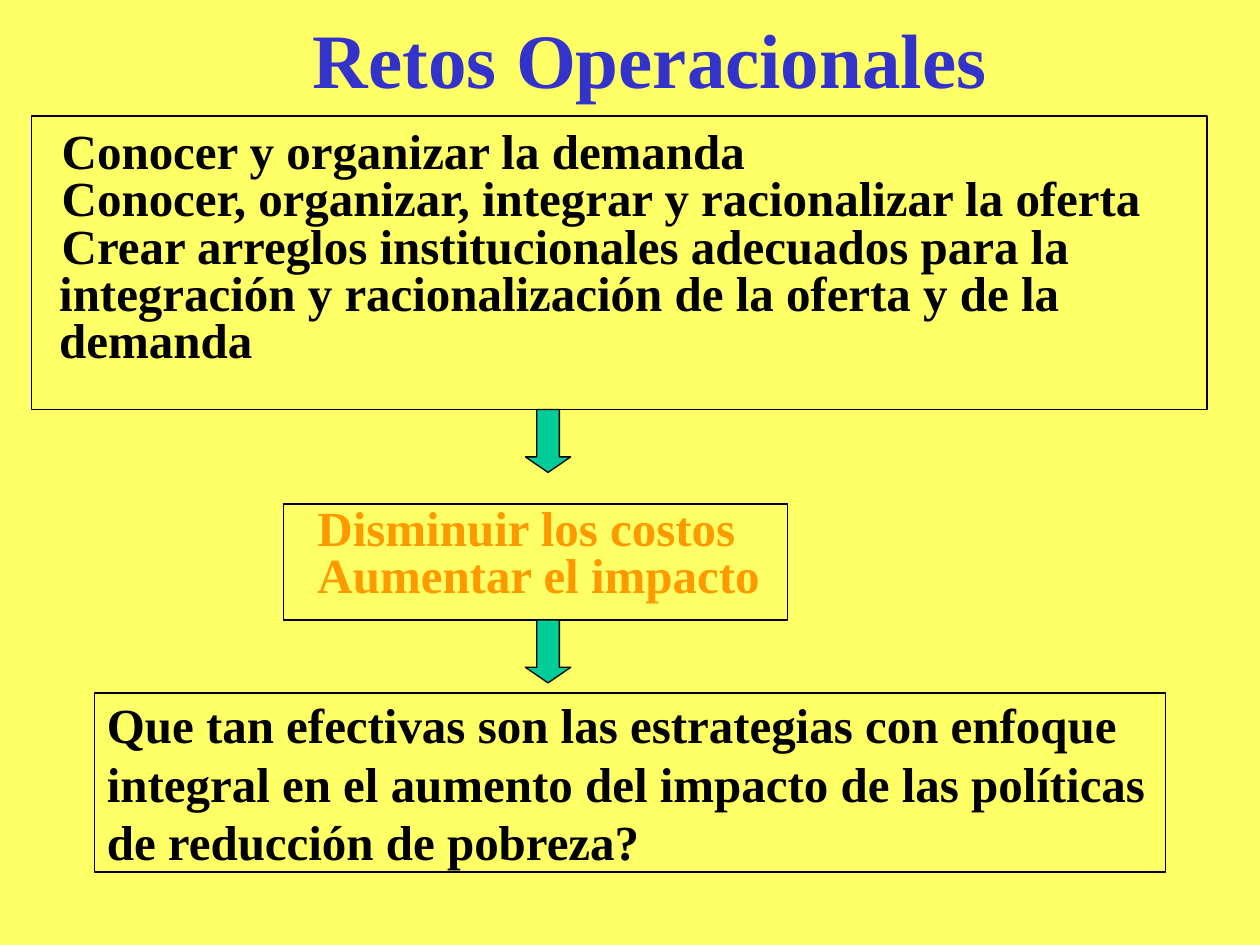
from pptx import Presentation
from pptx.dml.color import RGBColor
from pptx.enum.shapes import MSO_SHAPE
from pptx.enum.text import MSO_ANCHOR, PP_ALIGN
from pptx.util import Inches, Pt

RECTANGLE, DOWN_ARROW = MSO_SHAPE.RECTANGLE, MSO_SHAPE.DOWN_ARROW
TOP, MIDDLE = MSO_ANCHOR.TOP, MSO_ANCHOR.MIDDLE
LEFT, CENTER = PP_ALIGN.LEFT, PP_ALIGN.CENTER

# Content: box is left, top, width, height; margins are left, top (inches)
TITLE = {"lines": ["Retos Operacionales"], "box": (0.91, -0.17, 8.5, 1.25)}
STEPS = [
    {"lines": ["Conocer y organizar la demanda",
               "Conocer, organizar, integrar y racionalizar la oferta",
               "Crear arreglos institucionales adecuados para la integración "
               "y racionalización de la oferta y de la demanda"],
     "box": (0.25, 0.92, 9.33, 2.33), "margins": (0.22, 0.13),
     "color": "text", "spacing": 0.8, "indent": 0.02},
    {"lines": ["Disminuir los costos", "Aumentar el impacto"],
     "box": (2.25, 4, 4, 0.92), "margins": (0.25, 0.04),
     "color": "accent", "spacing": 0.8, "indent": 0.02},
    {"lines": ["Que tan efectivas son las estrategias con enfoque integral en el "
               "aumento del impacto de las políticas de reducción de pobreza?"],
     "box": (0.75, 5.5, 8.5, 1.42), "margins": (0.1, 0.01),
     "color": "text", "spacing": 1.0, "indent": 0},
]
ARROW = {"left": 4.17, "width": 0.36, "height": 0.5, "adjustments": (0.5, 0.343)}

THEME = {
    "font": "Times New Roman", "title_size": 44, "body_size": 28, "line": 0.75,
    "background": "FFFF66", "title": "3333CC", "text": "000000",
    "accent": "FF9900", "arrow": "00CC99", "outline": "000000",
}


def color(role):
    return RGBColor.from_string(THEME[role])


def set_all(target, values):
    for name, value in values.items():
        setattr(target, name, value)


def write(shape, lines, role, size, margins=(0.1, 0.05), anchor=TOP,
          alignment=LEFT, spacing=1.0, indent=0):
    frame = shape.text_frame
    set_all(frame, {"word_wrap": True, "vertical_anchor": anchor,
                    "margin_left": Inches(margins[0]), "margin_right": 0,
                    "margin_top": Inches(margins[1]), "margin_bottom": 0})
    for index, line in enumerate(lines):
        paragraph = frame.paragraphs[0] if index == 0 else frame.add_paragraph()
        set_all(paragraph, {"alignment": alignment, "line_spacing": spacing})
        paragraph._p.get_or_add_pPr().set("indent", str(Inches(indent)))
        run = paragraph.add_run()
        run.text = line
        set_all(run.font, {"name": THEME["font"], "size": Pt(size), "bold": True})
        run.font.color.rgb = color(role)


def add_outlined(slide, kind, box, fill=None):
    shape = slide.shapes.add_shape(kind, *map(Inches, box))
    shape.shadow.inherit = False
    if fill:
        shape.fill.solid()
        shape.fill.fore_color.rgb = color(fill)
    else:
        shape.fill.background()
    shape.line.color.rgb = color("outline")
    shape.line.width = Pt(THEME["line"])
    return shape


def main():
    presentation = Presentation()
    set_all(presentation, {"slide_width": Inches(10), "slide_height": Inches(7.5)})
    slide = presentation.slides.add_slide(presentation.slide_layouts[6])
    slide.background.fill.solid()
    slide.background.fill.fore_color.rgb = color("background")

    # Title
    title = slide.shapes.add_textbox(*map(Inches, TITLE["box"]))
    write(title, TITLE["lines"], "title", THEME["title_size"],
          margins=(0, 0), anchor=MIDDLE, alignment=CENTER)

    # Framed steps
    for step in STEPS:
        frame = add_outlined(slide, RECTANGLE, step["box"])
        write(frame, step["lines"], step["color"], THEME["body_size"],
              margins=step["margins"], spacing=step["spacing"], indent=step["indent"])

    # An arrow hangs from every step but the last
    for step in STEPS[:-1]:
        bottom = step["box"][1] + step["box"][3]
        arrow = add_outlined(slide, DOWN_ARROW,
                             (ARROW["left"], bottom, ARROW["width"], ARROW["height"]),
                             "arrow")
        for index, value in enumerate(ARROW["adjustments"]):
            arrow.adjustments[index] = value

    presentation.save("out.pptx")


if __name__ == "__main__":
    main()
